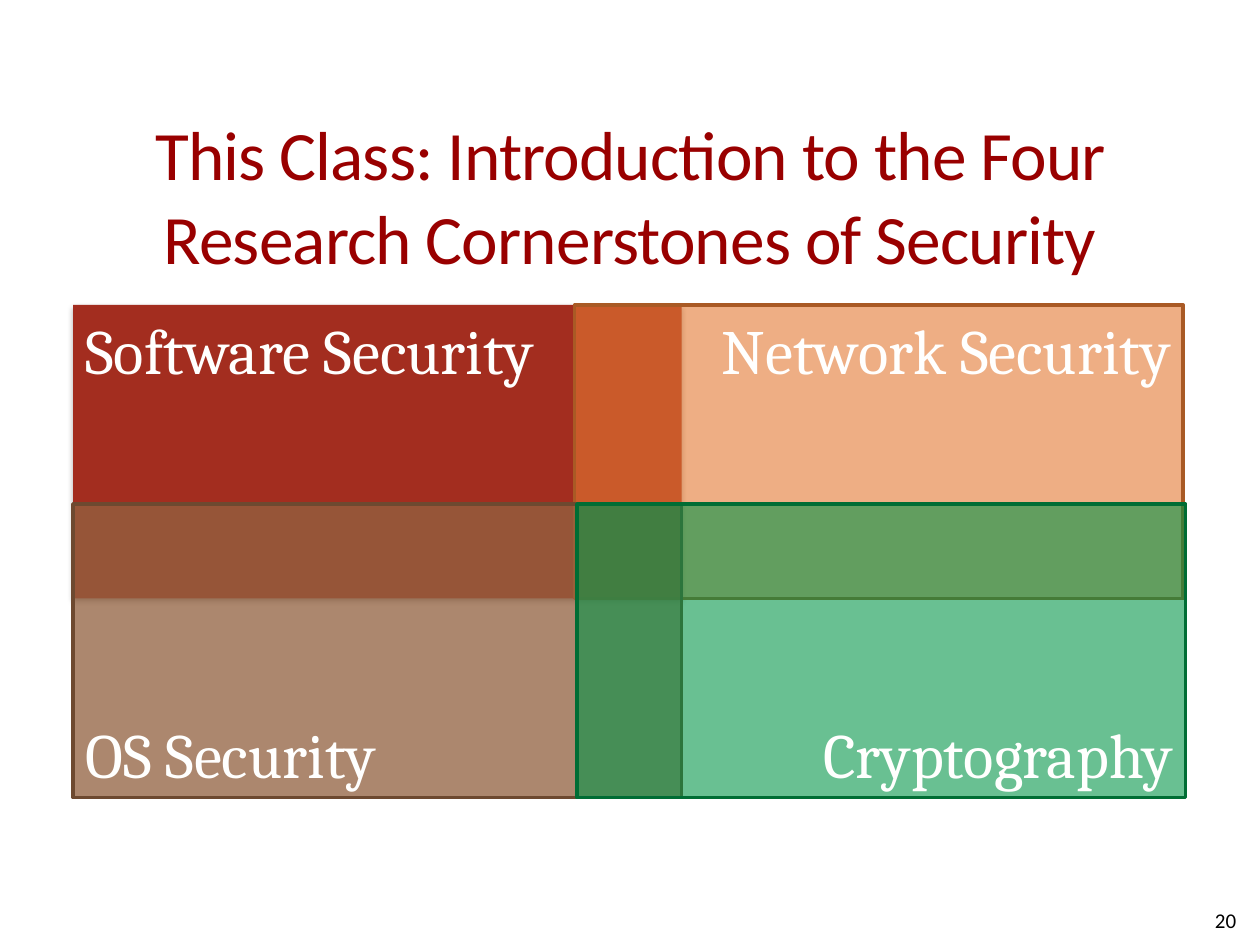
from lxml import etree
from pptx import Presentation
from pptx.dml.color import RGBColor
from pptx.enum.shapes import MSO_SHAPE
from pptx.enum.text import MSO_ANCHOR, PP_ALIGN
from pptx.oxml.ns import qn
from pptx.util import Inches, Pt

RECTANGLE = MSO_SHAPE.RECTANGLE
TOP, MIDDLE, BOTTOM = MSO_ANCHOR.TOP, MSO_ANCHOR.MIDDLE, MSO_ANCHOR.BOTTOM
LEFT, CENTER, RIGHT = PP_ALIGN.LEFT, PP_ALIGN.CENTER, PP_ALIGN.RIGHT

COLORS = {
    "title": "990000", "number": "000000", "label": "FFFFFE", "shadow": "000000",
    "software": "A32D1F", "network": "E47932", "os": "936241", "crypto": "009446",
    "network_line": "A95A25", "os_line": "6D4930", "crypto_line": "006D34",
}
TITLE = "This Class: Introduction to the Four Research Cornerstones of Security"
PAGE_NUMBER = "20"
CORNERSTONES = [
    ("Software Security", "software", 0.58, 0, 100),
    ("Network Security", "network", 4.56, 1, 60),
    ("OS Security", "os", 0.58, 2, 76),
    ("Cryptography", "crypto", 4.58, 3, 59),
]
ROW_TOPS = (2.42, 4)
PANEL_WIDTH, PANEL_HEIGHT = 4.83, 2.33
ROW_ANCHORS = (TOP, BOTTOM)
COLUMN_ALIGNMENTS = (LEFT, RIGHT)


def color(name):
    return RGBColor.from_string(COLORS[name])


def write(shape, text, font, size, color_name, alignment, anchor):
    frame = shape.text_frame
    frame.word_wrap = True
    frame.vertical_anchor = anchor
    frame.text = text
    paragraph = frame.paragraphs[0]
    paragraph.alignment = alignment
    run = paragraph.runs[0]
    run.font.name = font
    run.font.size = Pt(size)
    run.font.color.rgb = color(color_name)
    return run


def add_text(slide, box, *style):
    shape = slide.shapes.add_textbox(*map(Inches, box))
    return shape, write(shape, *style)


def set_opacity(shape, percent):
    fill_color = shape.fill._xPr.find(qn("a:solidFill"))[0]
    etree.SubElement(fill_color, qn("a:alpha"), val=str(percent * 1000))


def add_shadow(shape):
    effects = shape._element.spPr.find(qn("a:effectLst"))
    shadow = etree.SubElement(
        effects, qn("a:outerShdw"), blurRad=str(Pt(3.1)), dist=str(Pt(1.8)),
        dir="5400000", rotWithShape="0")
    shade = etree.SubElement(shadow, qn("a:srgbClr"), val=COLORS["shadow"])
    etree.SubElement(shade, qn("a:alpha"), val="35000")


def add_panel(group, label, name, left, position, opacity):
    row, column = divmod(position, 2)
    box = (left, ROW_TOPS[row], PANEL_WIDTH, PANEL_HEIGHT)
    shape = group.shapes.add_shape(RECTANGLE, *map(Inches, box))
    shape.shadow.inherit = False
    shape.fill.solid()
    shape.fill.fore_color.rgb = color(name)
    if opacity < 100:
        set_opacity(shape, opacity)
        shape.line.color.rgb = color(name + "_line")
        shape.line.width = Pt(2)
    else:
        shape.line.fill.background()
        add_shadow(shape)
    write(shape, label, "Cambria", 36, "label", COLUMN_ALIGNMENTS[column], ROW_ANCHORS[row])


def main():
    """Build the slide on the four cornerstones of security."""
    presentation = Presentation()
    presentation.slide_width, presentation.slide_height = Inches(10), Inches(7.5)
    slide = presentation.slides.add_slide(presentation.slide_layouts[6])
    title, title_run = add_text(
        slide, (0.5, 0.92, 9, 1.25), TITLE, "Calibri", 39.6, "title", CENTER, MIDDLE)
    title.text_frame.margin_left = title.text_frame.margin_right = 0
    title_run.font._element.set("spc", "-50")
    add_text(slide, (7.58, 7.1, 2.33, 0.4), PAGE_NUMBER, "Calibri", 12, "number", RIGHT, MIDDLE)
    group = slide.shapes.add_group_shape()
    for cornerstone in CORNERSTONES:
        add_panel(group, *cornerstone)
    presentation.save("out.pptx")


if __name__ == "__main__":
    main()
